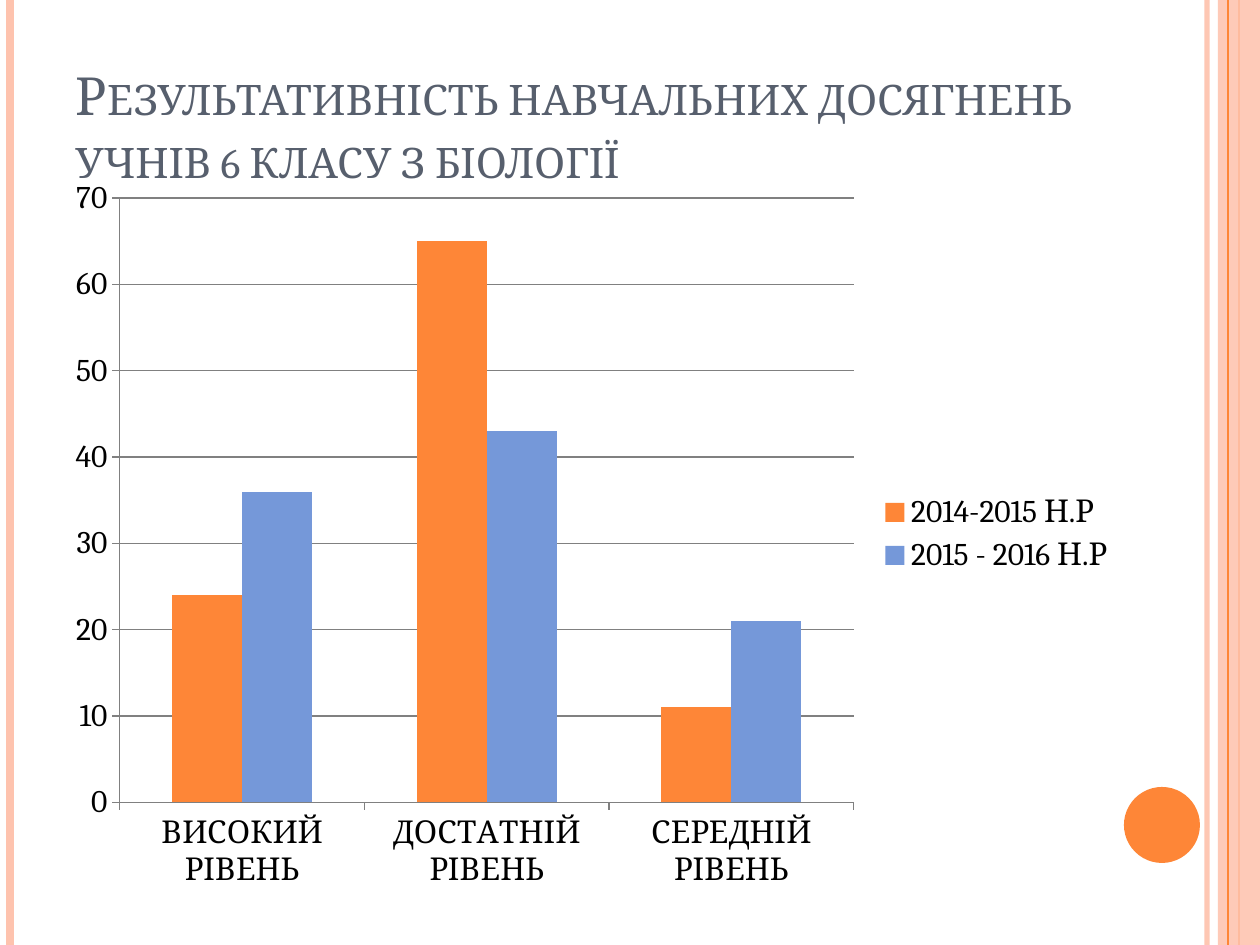
from lxml import etree
from pptx import Presentation
from pptx import util as u
from pptx.chart.data import CategoryChartData
from pptx.dml.color import RGBColor
from pptx.enum import chart as charts, shapes, text
from pptx.oxml.ns import qn

EMU_PER_PX = 914400 / 126
WIDTH, HEIGHT = 1260, 945
ORANGE, PEACH, BLUE = "FE8637", "FEC3AE", "7598D9"
SLATE, GRID, BLACK = "575F6D", "808080", "000000"


def px(length):
    return u.Emu(round(length * EMU_PER_PX))


def color(hex_string):
    return RGBColor.from_string(hex_string)


def set_opacity(element, percent):
    for fill in element.iter(qn("a:srgbClr")):
        etree.SubElement(fill, qn("a:alpha")).set("val", str(percent * 1000))


def write_text(paragraph, content, font, size, fill, small_caps=False):
    run = paragraph.add_run()
    run.text = content
    run.font.name = font
    run.font.size = u.Pt(size)
    run.font.color.rgb = color(fill)
    if small_caps:
        run._r.get_or_add_rPr().set("cap", "small")


class SlideBuilder:
    font = "Cambria"

    def __init__(self, slide):
        self.slide = slide

    def vertical_line(self, x, fill, width, opacity=100):
        line = self.slide.shapes.add_connector(
            shapes.MSO_CONNECTOR.STRAIGHT, px(x), 0, px(x), px(HEIGHT))
        line.line.color.rgb = color(fill)
        line.line.width = u.Pt(width)
        properties = line._element.spPr
        if opacity < 100:
            set_opacity(properties, opacity)
        etree.SubElement(properties, qn("a:effectLst"))

    def shape(self, kind, box, fill, opacity=100):
        shape = self.slide.shapes.add_shape(kind, *map(px, box))
        shape.shadow.inherit = False
        shape.fill.solid()
        shape.fill.fore_color.rgb = color(fill)
        shape.line.fill.background()
        if opacity < 100:
            set_opacity(shape._element.spPr, opacity)

    def title(self, box, content):
        frame = self.slide.shapes.add_textbox(*map(px, box)).text_frame
        frame.word_wrap = True
        frame.vertical_anchor = text.MSO_ANCHOR.BOTTOM
        write_text(frame.paragraphs[0], content, font=self.font, size=30,
                   fill=SLATE, small_caps=True)

    def column_chart(self, box, categories, series):
        data = CategoryChartData()
        data.categories = categories
        for name, values, _ in series:
            data.add_series(name, values)
        chart = self.slide.shapes.add_chart(
            charts.XL_CHART_TYPE.COLUMN_CLUSTERED, *map(px, box), data).chart
        chart.has_title = False
        chart.font.name = self.font
        chart.font.size = u.Pt(18)
        chart.font.color.rgb = color(BLACK)
        chart.has_legend = True
        chart.legend.position = charts.XL_LEGEND_POSITION.RIGHT
        chart.legend.include_in_layout = False

        plot = chart.plots[0]
        plot.gap_width = 150
        plot.overlap = 0
        plot.vary_by_categories = False
        for column, (_, _, fill) in zip(plot.series, series):
            column.format.fill.solid()
            column.format.fill.fore_color.rgb = color(fill)

        value_axis = chart.value_axis
        value_axis.minimum_scale, value_axis.maximum_scale = 0, 70
        value_axis.major_unit = 10
        value_axis.has_major_gridlines = True
        for axis in (chart.category_axis, value_axis):
            axis.major_tick_mark = charts.XL_TICK_MARK.OUTSIDE
            axis.minor_tick_mark = charts.XL_TICK_MARK.NONE
        for part in (chart.category_axis, value_axis, value_axis.major_gridlines):
            part.format.line.color.rgb = color(GRID)
            part.format.line.width = u.Pt(0.75)


def main():
    presentation = Presentation()
    presentation.slide_width, presentation.slide_height = px(WIDTH), px(HEIGHT)
    builder = SlideBuilder(presentation.slides.add_slide(presentation.slide_layouts[6]))

    builder.vertical_line(1207, PEACH, 3, opacity=93)
    builder.vertical_line(10, PEACH, 4.5)
    builder.vertical_line(1239, ORANGE, 1.5)
    builder.shape(shapes.MSO_SHAPE.RECTANGLE, (1218, 0, 42, HEIGHT), PEACH, opacity=87)
    builder.vertical_line(1228, ORANGE, 0.75)
    builder.shape(shapes.MSO_SHAPE.OVAL, (1124, 787, 76, 76), ORANGE)

    builder.title((63, 38, 1029, 157),
                  "Результативність навчальних досягнень учнів 6 класу з біології")
    builder.column_chart(
        (54, 165, 1074, 738),
        ["ВИСОКИЙ РІВЕНЬ", "ДОСТАТНІЙ РІВЕНЬ", "СЕРЕДНІЙ РІВЕНЬ"],
        [("2014-2015 Н.Р", (24, 65, 11), ORANGE),
         ("2015 - 2016 Н.Р", (36, 43, 21), BLUE)])

    presentation.save("out.pptx")


if __name__ == "__main__":
    main()
